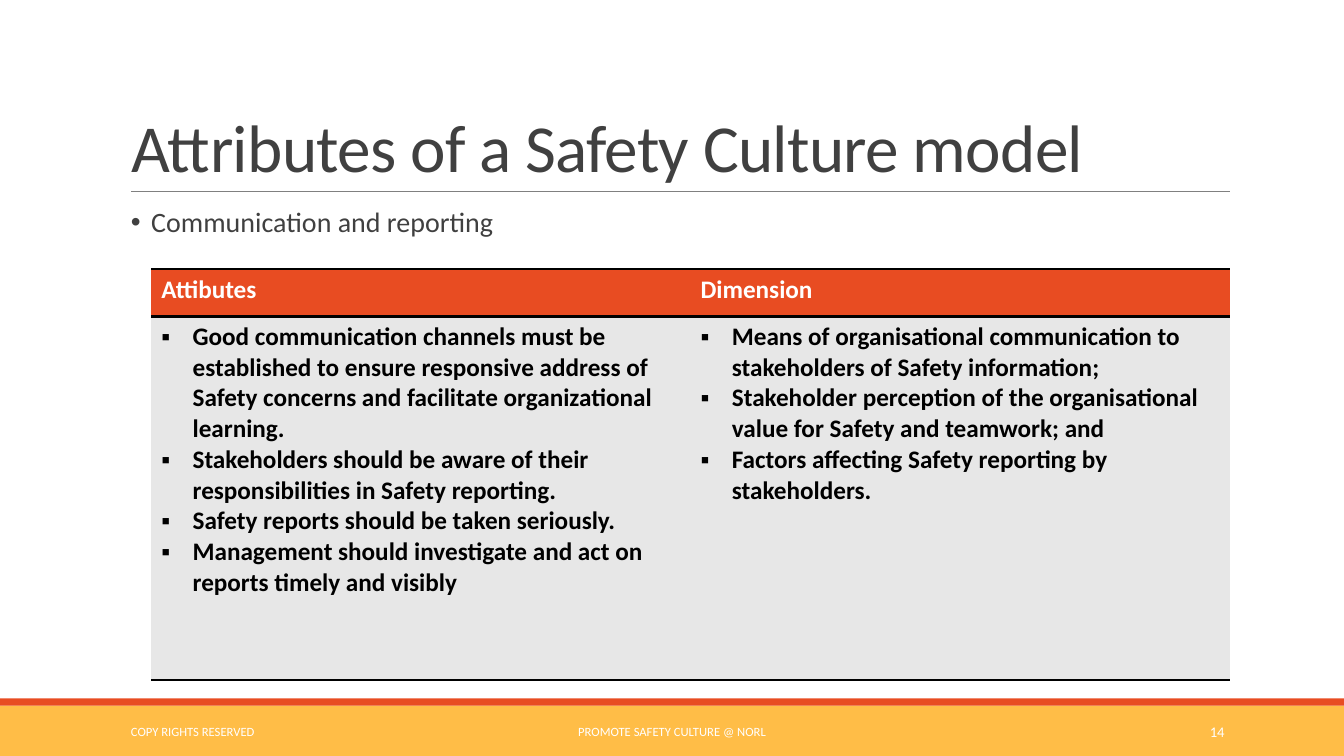
import pptx
import pptx.dml.color
import pptx.enum.shapes
import pptx.enum.text
import pptx.oxml
import pptx.oxml.ns
import pptx.util
from pptx.util import Cm

ALIGN = pptx.enum.text.PP_ALIGN
ANCHOR = pptx.enum.text.MSO_ANCHOR
ORANGE, AMBER, DARK, WHITE, BLACK = "E84C22", "FFBD47", "404040", "FFFFFF", "000000"
NAMESPACE = pptx.oxml.ns.nsdecls("a")
PLAIN_TABLE_STYLE = "{2D5ABB26-0587-4C30-8999-92F81FD0307C}"

ATTRIBUTES = [
    "Good communication channels must be established to ensure responsive address of "
    "Safety concerns and facilitate organizational learning.",
    "Stakeholders should be aware of their responsibilities in Safety reporting.",
    "Safety reports should be taken seriously.",
    "Management should investigate and act on reports timely and visibly",
]
DIMENSIONS = [
    "Means of organisational communication to stakeholders of Safety information;",
    "Stakeholder perception of the organisational value for Safety and teamwork; and",
    "Factors affecting Safety reporting by stakeholders.",
]


def paint(color_format, value):
    color_format.rgb = pptx.dml.color.RGBColor.from_string(value)


def fill_solid(item, value):
    item.fill.solid()
    paint(item.fill.fore_color, value)


def add_bullet(paragraph, symbol, left, hanging):
    properties = paragraph._p.get_or_add_pPr()
    properties.set("marL", str(left))
    properties.set("indent", str(-hanging))
    properties.append(pptx.oxml.parse_xml(f'<a:buFont {NAMESPACE} typeface="Arial"/>'))
    properties.append(pptx.oxml.parse_xml(f'<a:buChar {NAMESPACE} char="{symbol}"/>'))


def write(frame, texts, size=18, color=DARK, bold=False, align=ALIGN.LEFT,
          line_spacing=1.0, bullet=None, letter_spacing=None):
    """Fill a text frame with one paragraph per text; bullet is (symbol, left, hanging)."""
    for index, text in enumerate(texts):
        paragraph = frame.add_paragraph() if index else frame.paragraphs[0]
        if bullet:
            add_bullet(paragraph, *bullet)
        paragraph.alignment = align
        paragraph.line_spacing = line_spacing
        run = paragraph.add_run()
        run.text = text
        run.font.name = "Calibri"
        run.font.size = pptx.util.Pt(size)
        run.font.bold = bold
        paint(run.font.color, color)
        if letter_spacing is not None:
            run.font._element.set("spc", str(int(letter_spacing * 100)))


def add_band(slide, top, height, color):
    band = slide.shapes.add_shape(
        pptx.enum.shapes.MSO_SHAPE.RECTANGLE, 0, top, Cm(33.87), height)
    band.shadow.inherit = False
    fill_solid(band, color)
    band.line.fill.background()


def add_rule(slide, left, right, top):
    rule = slide.shapes.add_connector(
        pptx.enum.shapes.MSO_CONNECTOR.STRAIGHT, left, top, right, top)
    paint(rule.line.color, "808080")
    rule.line.width = pptx.util.Pt(0.5)
    rule._element.spPr.append(pptx.oxml.parse_xml(f"<a:effectLst {NAMESPACE}/>"))


def add_text(slide, left, top, width, height, text, anchor=ANCHOR.MIDDLE, inset=Cm(0.25),
             **text_format):
    frame = slide.shapes.add_textbox(left, top, width, height).text_frame
    frame.word_wrap = True
    frame.vertical_anchor = anchor
    frame.margin_left = frame.margin_right = inset
    write(frame, [text], **text_format)


def set_title(slide, text):
    title = slide.shapes.title
    title.left, title.top, title.width, title.height = Cm(3.05), Cm(0.79), Cm(27.94), Cm(4.04)
    title.text_frame.vertical_anchor = ANCHOR.BOTTOM
    title.text_frame.auto_size = pptx.enum.text.MSO_AUTO_SIZE.NONE
    write(title.text_frame, [text], size=48, line_spacing=0.85, letter_spacing=-0.5)


def add_borders(cell, sides):
    for position, side in enumerate(sides):
        border = pptx.oxml.parse_xml(
            f'<a:ln{side} {NAMESPACE} w="{pptx.util.Pt(2)}"><a:solidFill>'
            f'<a:srgbClr val="{BLACK}"/></a:solidFill></a:ln{side}>')
        cell._tc.get_or_add_tcPr().insert(position, border)


def add_comparison_table(slide, columns):
    heights = [Cm(1.19), Cm(9.17)]
    frame = slide.shapes.add_table(
        2, len(columns), Cm(3.81), Cm(6.78), Cm(27.18), sum(heights))
    table = frame.table
    table.horz_banding = False
    table._tbl.tblPr.find(pptx.oxml.ns.qn("a:tableStyleId")).text = PLAIN_TABLE_STYLE
    for row, height in zip(table.rows, heights):
        row.height = height
    for index, (heading, points) in enumerate(columns):
        header, body = table.cell(0, index), table.cell(1, index)
        fill_solid(header, ORANGE)
        fill_solid(body, "E7E7E7")
        add_borders(header, "TB")
        add_borders(body, "TB")
        write(header.text_frame, [heading], color=WHITE, bold=True)
        write(body.text_frame, points, color=BLACK, bold=True,
              bullet=("▪", Cm(0.79), Cm(0.79)))


def main():
    presentation = pptx.Presentation()
    presentation.slide_width, presentation.slide_height = Cm(33.87), Cm(19.05)
    slide = presentation.slides.add_slide(presentation.slide_layouts[5])

    # Footer bands and title rule
    add_band(slide, Cm(17.78), Cm(1.27), AMBER)
    add_band(slide, Cm(17.6), Cm(0.18), ORANGE)
    add_rule(slide, Cm(3.31), Cm(30.99), Cm(4.83))

    # Title and topic
    set_title(slide, "Attributes of a Safety Culture model")
    add_text(slide, Cm(3.05), Cm(5.13), Cm(27.94), Cm(1.3), "Communication and reporting",
             anchor=ANCHOR.TOP, inset=0, size=20, line_spacing=0.9,
             bullet=("•", Cm(0.76), Cm(0.51)))

    # Attributes and dimensions
    add_comparison_table(slide, [("Attibutes", ATTRIBUTES), ("Dimension", DIMENSIONS)])

    # Footer
    for left, width, text, size, align in [
        (3.05, 6.86, "COPY RIGHTS RESERVED", 9, ALIGN.LEFT),
        (10.24, 13.39, "PROMOTE SAFETY CULTURE @ NORL", 9, ALIGN.CENTER),
        (27.48, 3.63, "14", 10.5, ALIGN.RIGHT),
    ]:
        add_text(slide, Cm(left), Cm(17.93), Cm(width), Cm(1.02), text,
                 size=size, color=WHITE, align=align)

    presentation.save("out.pptx")


if __name__ == "__main__":
    main()
